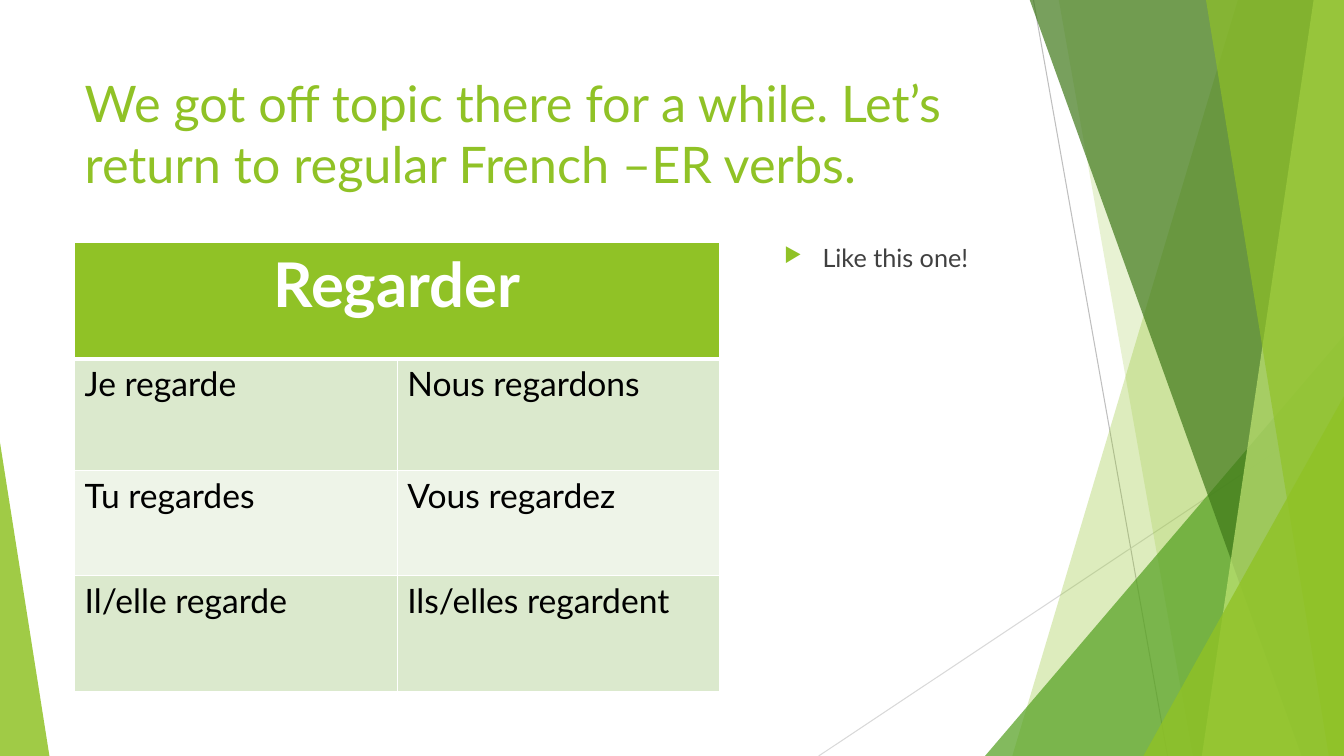
from typing import NamedTuple

from lxml import etree
from pptx import Presentation
from pptx.dml.color import RGBColor
from pptx.enum.shapes import MSO_CONNECTOR, MSO_SHAPE
from pptx.enum.text import MSO_ANCHOR, PP_ALIGN
from pptx.oxml.ns import qn
from pptx.util import Inches, Pt

STRAIGHT = MSO_CONNECTOR.STRAIGHT
TRIANGLE = MSO_SHAPE.ISOSCELES_TRIANGLE
TOP = MSO_ANCHOR.TOP
LEFT, CENTER = PP_ALIGN.LEFT, PP_ALIGN.CENTER

FONT = "Lato"
WIDTH, HEIGHT = 13.33, 7.5
TITLE_ONLY = 5
COLORS = {
    "green": "90C226", "leaf": "54A021", "forest": "3F7819", "lime": "C0E474",
    "gray": "BFBFBF", "pale_gray": "D9D9D9", "text": "404040",
    "black": "000000", "white": "FFFFFF", "band": "DBE9CD", "pale_band": "EEF4E8",
}


class Ray(NamedTuple):
    start: tuple[float, float]
    end: tuple[float, float]
    color: str


class Panel(NamedTuple):
    """A band that reaches the right edge, with a slanted left side."""
    top_x: float
    bottom_x: float
    color: str
    opacity: int


class Wedge(NamedTuple):
    """A right triangle on the bottom edge; apex 0 is left, 1 is right."""
    left: float
    top: float
    width: float
    apex: int
    color: str
    opacity: int


RAYS = [
    Ray((10.25, 0), (11.58, HEIGHT), "gray"),
    Ray((WIDTH, 4.03), (8.12, HEIGHT), "pale_gray"),
]
FACETS = [
    Panel(12.28, 10.04, "green", 30),
    Panel(10.5, 11.83, "green", 20),
    Wedge(9.77, 3.33, 3.56, 1, "leaf", 72),
    Panel(10.21, 12.91, "forest", 70),
    Panel(13.03, 11.92, "lime", 70),
    Panel(11.96, 13.18, "green", 65),
    Wedge(11.34, 3.93, 1.99, 1, "green", 80),
    Wedge(0, 4.39, 0.49, 0, "green", 85),
]
HEADING = "Regarder"
CONJUGATION = [
    ("Je regarde", "Nous regardons"),
    ("Tu regardes", "Vous regardez"),
    ("Il/elle regarde", "Ils/elles regardent"),
]
ROW_HEIGHTS = [1.16, 1.11, 1.04, 1.15]


def rgb(name: str) -> RGBColor:
    return RGBColor.from_string(COLORS[name])


def add_span(para, text: str, size: int, color: str, bold: bool = False) -> None:
    span = para.add_run()
    span.text = text
    span.font.name = FONT
    span.font.size = Pt(size)
    span.font.bold = bold
    span.font.color.rgb = rgb(color)


def draw_ray(page, ray: Ray) -> None:
    points = [Inches(value) for value in ray.start + ray.end]
    line = page.shapes.add_connector(STRAIGHT, *points)
    line.line.color.rgb = rgb(ray.color)
    line.line.width = Pt(0.75)
    etree.SubElement(line.element.spPr, qn("a:effectLst"))


def draw_facet(page, facet: Panel | Wedge) -> None:
    if isinstance(facet, Panel):
        top = -0.01
        corners = [(WIDTH, top), (WIDTH, HEIGHT), (facet.bottom_x, HEIGHT)]
        builder = page.shapes.build_freeform(Inches(facet.top_x), Inches(top))
        builder.add_line_segments([(Inches(x), Inches(y)) for x, y in corners])
        shape = builder.convert_to_shape()
    else:
        shape = page.shapes.add_shape(
            TRIANGLE, Inches(facet.left), Inches(facet.top),
            Inches(facet.width), Inches(HEIGHT - facet.top))
        shape.adjustments[0] = facet.apex
    shape.shadow.inherit = False
    shape.line.fill.background()
    shape.fill.solid()
    shape.fill.fore_color.rgb = rgb(facet.color)
    color = shape.element.spPr.find(qn("a:solidFill"))[0]
    etree.SubElement(color, qn("a:alpha"), val=str(facet.opacity * 1000))


def write_title(page) -> None:
    title = page.shapes.title
    title.left, title.top = Inches(0.74), Inches(0.67)
    title.width, title.height = Inches(9.4), Inches(1.44)
    title.text_frame.word_wrap = True
    title.text_frame.vertical_anchor = TOP
    para = title.text_frame.paragraphs[0]
    para.alignment = LEFT
    para.line_spacing = 1.0
    add_span(para, "We got off topic there for a while. "
             "Let’s return to regular French –ER verbs.", 36, "green")
    # Bring the title in front of the facets.
    title.element.getparent().append(title.element)


def write_remark(page) -> None:
    box = page.shapes.add_textbox(
        Inches(7.68), Inches(2.36), Inches(2.46), Inches(4.24))
    box.text_frame.word_wrap = True
    para = box.text_frame.paragraphs[0]
    para.space_before = Pt(10)
    add_span(para, "Like this one!", 18, "text")
    properties = para._p.get_or_add_pPr()
    indent = Inches(0.38)
    properties.set("marL", str(indent))
    properties.set("indent", str(-indent))
    color = etree.SubElement(properties, qn("a:buClr"))
    etree.SubElement(color, qn("a:srgbClr"), val=COLORS["green"])
    etree.SubElement(properties, qn("a:buSzPct"), val="80000")
    etree.SubElement(properties, qn("a:buChar"), char="▶")


def set_borders(cell, top: int, bottom: int) -> None:
    """Draw white borders; they must come before the fill in the cell's XML."""
    properties = cell._tc.get_or_add_tcPr()
    widths = {"lnL": 1, "lnR": 1, "lnT": top, "lnB": bottom}
    for position, (side, width) in enumerate(widths.items()):
        border = etree.Element(qn(f"a:{side}"), w=str(Pt(width)))
        fill = etree.SubElement(border, qn("a:solidFill"))
        etree.SubElement(fill, qn("a:srgbClr"), val=COLORS["white"])
        properties.insert(position, border)


def draw_table(page) -> None:
    table = page.shapes.add_table(
        len(ROW_HEIGHTS), 2, Inches(0.74), Inches(2.4),
        Inches(6.4), Inches(sum(ROW_HEIGHTS))).table
    for row, height in zip(table.rows, ROW_HEIGHTS):
        row.height = Inches(height)
    table.cell(0, 0).merge(table.cell(0, 1))
    for index, texts in enumerate([(HEADING, ""), *CONJUGATION]):
        header = index == 0
        fill = "green" if header else "band" if index % 2 else "pale_band"
        for column, text in enumerate(texts):
            cell = table.cell(index, column)
            cell.fill.solid()
            cell.fill.fore_color.rgb = rgb(fill)
            set_borders(cell, 3 if index == 1 else 1, 3 if header else 1)
            if not text:
                continue
            para = cell.text_frame.paragraphs[0]
            if header:
                para.alignment = CENTER
                add_span(para, text, 44, "white", bold=True)
            else:
                add_span(para, text, 24, "black")


def main() -> None:
    deck = Presentation()
    deck.slide_width, deck.slide_height = Inches(WIDTH), Inches(HEIGHT)
    page = deck.slides.add_slide(deck.slide_layouts[TITLE_ONLY])
    for ray in RAYS:
        draw_ray(page, ray)
    for facet in FACETS:
        draw_facet(page, facet)
    write_title(page)
    write_remark(page)
    draw_table(page)
    deck.save("out.pptx")


if __name__ == "__main__":
    main()
